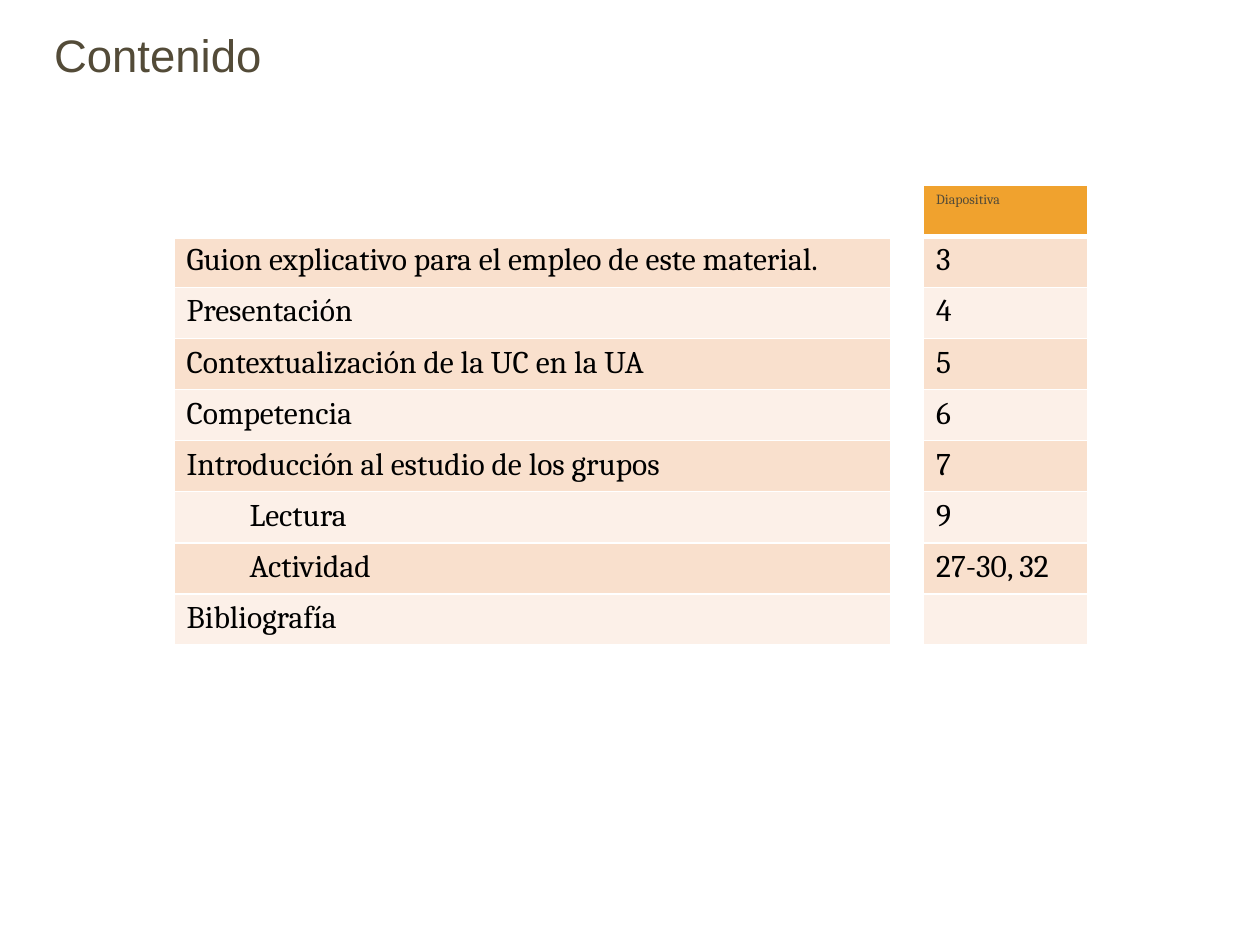
from dataclasses import dataclass

from lxml import etree
from pptx import Presentation
from pptx.dml.color import RGBColor
from pptx.enum.text import MSO_ANCHOR
from pptx.oxml.ns import qn
from pptx.util import Pt

MIDDLE = MSO_ANCHOR.MIDDLE


@dataclass(frozen=True)
class Theme:
    head: str = "Arial"
    body: str = "Cambria"
    brown: str = "534B38"
    black: str = "000000"
    white: str = "FFFFFF"
    gold: str = "F0A22E"
    bands: tuple = ("F9E0CD", "FCF0E8")
    title: float = 26
    label: float = 8
    text: float = 18


THEME = Theme()

# Topic, slide number, indent in points
ROWS = [
    ("Guion explicativo para el empleo de este material.", "3", 0),
    ("Presentación", "4", 0),
    ("Contextualización de la UC en la UA", "5", 0),
    ("Competencia", "6", 0),
    ("Introducción al estudio de los grupos", "7", 0),
    ("Lectura", "9", 36),
    ("Actividad", "27-30, 32", 36),
    ("Bibliografía", "", 0),
]
COLS = (409.5, 18.9, 94)
ROW_H = 29.2


def put(para, text, font, size, color):
    """Write one run and format it."""
    run = para.add_run()
    run.text = text
    for key, value in {"name": font, "size": Pt(size)}.items():
        setattr(run.font, key, value)
    run.font.color.rgb = RGBColor.from_string(color)


def add_title(slide, text):
    box = slide.shapes.add_textbox(Pt(23.8), Pt(9.4), Pt(694), Pt(43.2))
    frame = box.text_frame
    for key, value in {"word_wrap": True, "vertical_anchor": MIDDLE}.items():
        setattr(frame, key, value)
    put(frame.paragraphs[0], text, THEME.head, THEME.title, THEME.brown)


def set_edges(cell, **widths):
    """Give a cell white borders, 1 pt unless a side says otherwise."""
    props = cell._tc.get_or_add_tcPr()
    for spot, side in enumerate("LRTB"):
        line = etree.Element(qn(f"a:ln{side}"), w=str(Pt(widths.get(side, 1))))
        fill = etree.SubElement(line, qn("a:solidFill"))
        etree.SubElement(fill, qn("a:srgbClr"), val=THEME.white)
        props.insert(spot, line)


def fill_cell(cell, text, fill, size, color, indent=0):
    if fill:
        cell.fill.solid()
        cell.fill.fore_color.rgb = RGBColor.from_string(fill)
    else:
        cell.fill.background()
    para = cell.text_frame.paragraphs[0]
    if indent:
        para.level = 1
        para._p.get_or_add_pPr().set("marL", str(Pt(indent)))
    if text:
        put(para, text, THEME.body, size, color)


def add_index(slide):
    count = len(ROWS) + 1
    frame = slide.shapes.add_table(
        count, len(COLS), Pt(99.4), Pt(105.8), Pt(sum(COLS)), Pt(ROW_H * count))
    table = frame.table
    table.horz_banding = table.first_row = False
    for col, width in zip(table.columns, COLS):
        col.width = Pt(width)
    for row in table.rows:
        row.height = Pt(ROW_H)

    # Header row
    for col, text in enumerate(("", "", "Diapositiva")):
        cell = table.cell(0, col)
        fill_cell(cell, text, THEME.gold if text else None,
                  THEME.label, THEME.brown)
        set_edges(cell, B=3)

    # Banded rows with an empty gap column
    for row, (topic, page, indent) in enumerate(ROWS, 1):
        band = THEME.bands[(row - 1) % 2]
        parts = ((topic, band, indent), ("", None, 0), (page, band, 0))
        for col, (text, fill, left) in enumerate(parts):
            cell = table.cell(row, col)
            fill_cell(cell, text, fill, THEME.text, THEME.black, left)
            set_edges(cell, T=3 if row == 1 else 1)


def main():
    deck = Presentation()
    deck.slide_width, deck.slide_height = Pt(720), Pt(540)
    slide = deck.slides.add_slide(deck.slide_layouts[6])
    add_title(slide, "Contenido")
    add_index(slide)
    deck.save("out.pptx")


if __name__ == "__main__":
    main()
